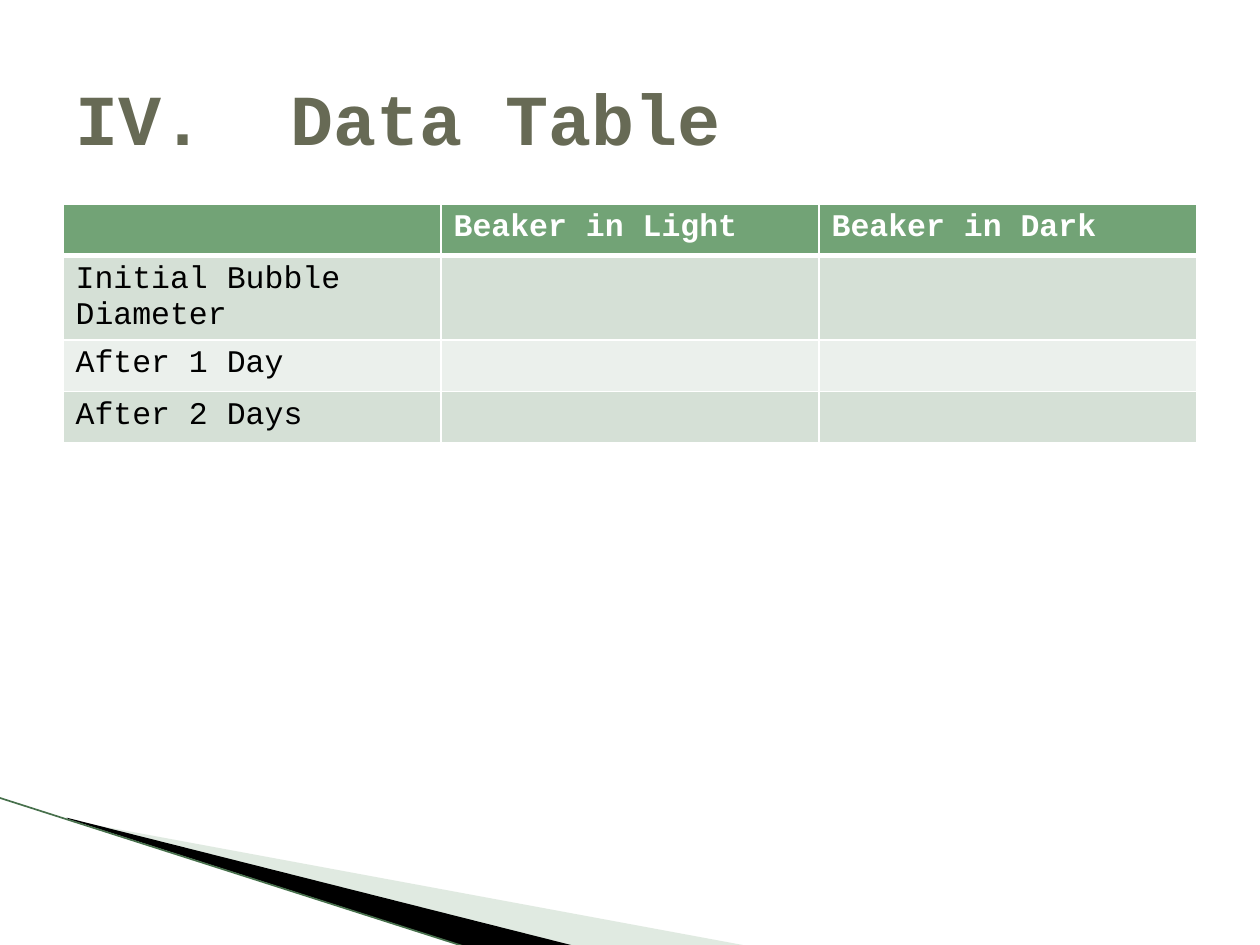
import dataclasses

import lxml.etree
import pptx
import pptx.dml.color
import pptx.enum.text
import pptx.oxml.ns
import pptx.util

Inches = pptx.util.Inches
qn = pptx.oxml.ns.qn


@dataclasses.dataclass(frozen=True)
class Theme:
    """Colours, font and type sizes of the slide."""
    font: str = "Courier New"
    title_size: int = 41
    table_size: int = 18
    title: str = "676A55"
    header: str = "72A376"
    bands: tuple = ("D5E0D6", "EBF0EC")
    white: str = "FFFFFF"
    black: str = "000000"
    pale_wedge: str = "B3CBB5"
    edge: str = "47704C"


THEME = Theme()
ROWS = (
    ("", "Beaker in Light", "Beaker in Dark"),
    ("Initial Bubble Diameter", "", ""),
    ("After 1 Day", "", ""),
    ("After 2 Days", "", ""),
)


def rgb(value):
    """Return a colour object for a hex value."""
    return pptx.dml.color.RGBColor.from_string(value)


def style_text(paragraph, size, color, bold):
    """Format a paragraph and its runs."""
    for item in (paragraph, *paragraph.runs):
        item.font.name = THEME.font
        item.font.size = pptx.util.Pt(size)
        item.font.bold = bold
        item.font.color.rgb = rgb(color)


def add_wedge(slide, points, color, opacity=100):
    """Draw a filled wedge through points given in inches."""
    corners = [(Inches(x), Inches(y)) for x, y in points]
    builder = slide.shapes.build_freeform(*corners[0])
    builder.add_line_segments(corners[1:], close=True)
    wedge = builder.convert_to_shape()
    wedge.shadow.inherit = False
    wedge.fill.solid()
    wedge.fill.fore_color.rgb = rgb(color)
    wedge.line.fill.background()
    if opacity < 100:
        fill_color = wedge.fill._xPr.find(".//" + qn("a:srgbClr"))
        alpha = lxml.etree.SubElement(fill_color, qn("a:alpha"))
        alpha.set("val", str(opacity * 1000))


def add_edge(slide, start, end):
    """Draw the thin line along the wedges."""
    edge = slide.shapes.add_connector(
        pptx.enum.shapes.MSO_CONNECTOR.STRAIGHT, *map(Inches, start + end))
    edge.line.color.rgb = rgb(THEME.edge)
    edge.line.width = pptx.util.Pt(0.95)
    lxml.etree.SubElement(edge._element.spPr, qn("a:effectLst"))


def add_title(slide, text):
    """Add the slide title."""
    box = slide.shapes.add_textbox(Inches(0.5), Inches(0.3), Inches(9), Inches(1.25))
    frame = box.text_frame
    frame.word_wrap = True
    frame.vertical_anchor = pptx.enum.text.MSO_ANCHOR.MIDDLE
    frame.text = text
    style_text(frame.paragraphs[0], THEME.title_size, THEME.title, True)


def set_borders(cell, top, bottom):
    """Give a cell white borders, with top and bottom widths in points."""
    properties = cell._tc.get_or_add_tcPr()
    widths = {"a:lnL": 1, "a:lnR": 1, "a:lnT": top, "a:lnB": bottom}
    for index, (tag, width) in enumerate(widths.items()):
        border = lxml.etree.Element(qn(tag), w=str(pptx.util.Pt(width)))
        fill = lxml.etree.SubElement(border, qn("a:solidFill"))
        lxml.etree.SubElement(fill, qn("a:srgbClr"), val=THEME.white)
        properties.insert(index, border)


def add_data_table(slide, rows):
    """Add the table with a header row and banded body rows."""
    height = Inches(0.41)
    table = slide.shapes.add_table(
        len(rows), len(rows[0]), Inches(0.5), Inches(1.62),
        Inches(9), height * len(rows)).table
    for row_index, texts in enumerate(rows):
        is_header = row_index == 0
        table.rows[row_index].height = height
        color = THEME.header if is_header else THEME.bands[(row_index - 1) % 2]
        for column_index, text in enumerate(texts):
            cell = table.cell(row_index, column_index)
            cell.text_frame.text = text
            cell.fill.solid()
            cell.fill.fore_color.rgb = rgb(color)
            set_borders(cell, 3 if row_index == 1 else 1, 3 if is_header else 1)
            style_text(cell.text_frame.paragraphs[0], THEME.table_size,
                       THEME.white if is_header else THEME.black, is_header)


def main():
    """Build and save the deck."""
    deck = pptx.Presentation()
    deck.slide_width, deck.slide_height = Inches(10), Inches(7.5)
    slide = deck.slides.add_slide(deck.slide_layouts[6])
    add_wedge(slide, [(0.55, 6.51), (5.95, 7.51), (4.56, 7.51), (0.55, 6.5)],
              THEME.pale_wedge, 40)
    add_wedge(slide, [(0.53, 6.49), (4.57, 7.51), (3.72, 7.52), (0.54, 6.5)],
              THEME.black)
    add_edge(slide, (-0.01, 6.33), (3.71, 7.52))
    add_data_table(slide, ROWS)
    add_title(slide, "IV.  Data Table")
    deck.save("out.pptx")


if __name__ == "__main__":
    main()
